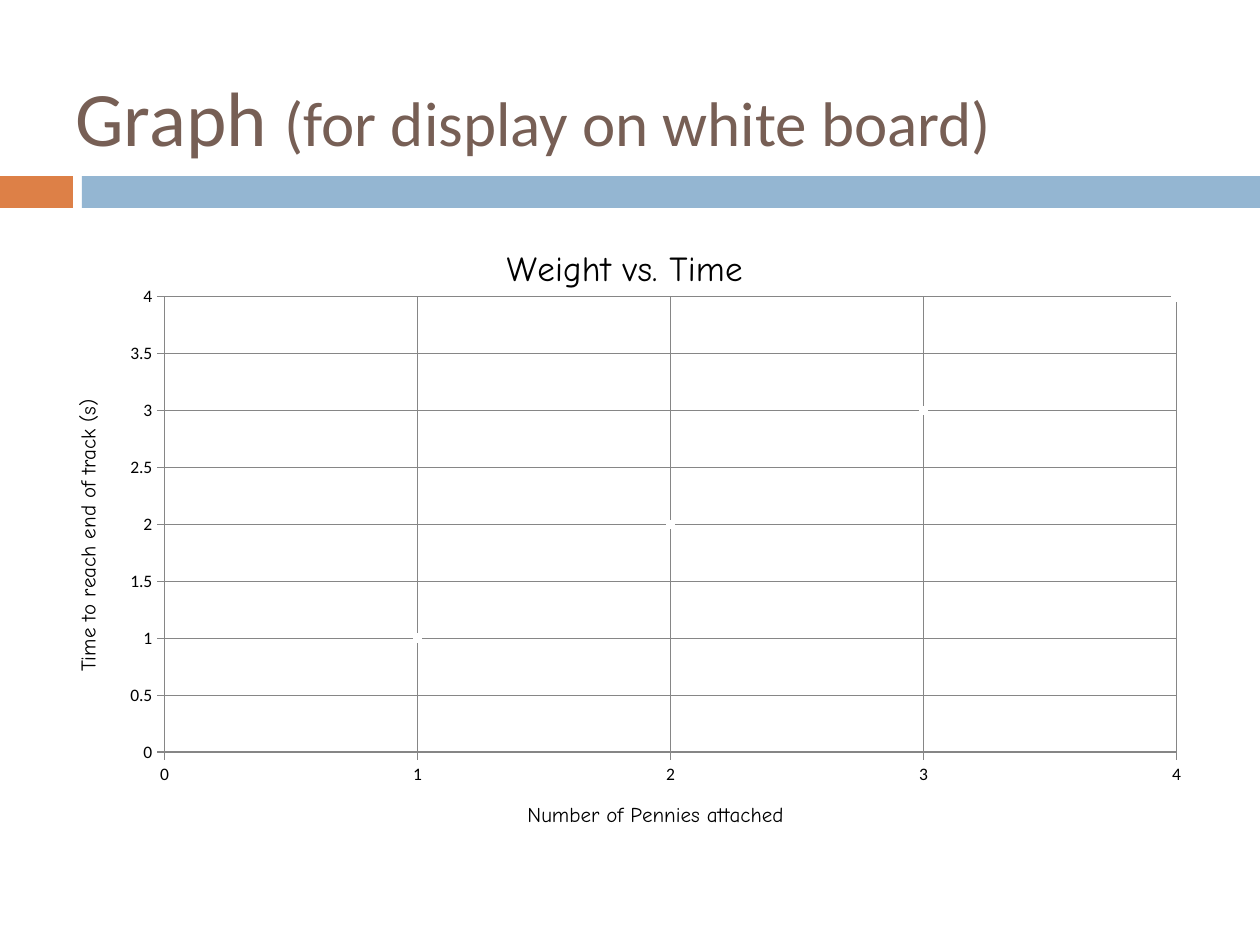
from lxml import etree
from pptx import Presentation
from pptx.chart.data import XyChartData
from pptx.dml.color import RGBColor
from pptx.enum.chart import XL_CHART_TYPE, XL_MARKER_STYLE, XL_TICK_MARK
from pptx.enum.shapes import MSO_SHAPE
from pptx.enum.text import MSO_ANCHOR
from pptx.oxml.ns import qn
from pptx.util import Emu, Pt

ORANGE = RGBColor(0xDD, 0x80, 0x47)
BLUE = RGBColor(0x94, 0xB6, 0xD2)
BROWN = RGBColor(0x77, 0x5F, 0x55)
BLACK = RGBColor(0, 0, 0)
GREY = RGBColor(0x86, 0x86, 0x86)
WHITE = RGBColor(0xFF, 0xFF, 0xFF)

TITLE = [("Graph ", 44), ("(for display on white board)", 36)]
BARS = [(0, 73, ORANGE), (82, 1178, BLUE)]
CHART_TITLE = "Weight vs. Time"
X_TITLE = "Number of Pennies attached"
Y_TITLE = "Time to reach end of track (s)"
POINTS = [(n, n) for n in range(1, 7)]
PLOT = {"x": 0.105, "y": 0.116, "w": 0.868, "h": 0.688}


def px(*values):
    return [Emu(round(v * 914400 / 126)) for v in values]


def style(font, name, size, color):
    font.name, font.size, font.bold = name, Pt(size), False
    font.color.rgb = color


def add_title(owner, text, size):
    tf = owner.text_frame
    r = tf.paragraphs[0].add_run()
    r.text = text
    style(r.font, "Comic Neue", size, BLACK)


def set_axis(axis, title, step):
    axis.has_title = True
    add_title(axis.axis_title, title, 12)
    axis.minimum_scale, axis.maximum_scale, axis.major_unit = 0, 4, step
    axis.major_tick_mark = XL_TICK_MARK.OUTSIDE
    axis.minor_tick_mark = XL_TICK_MARK.NONE
    axis.has_major_gridlines = True
    axis.tick_labels.number_format = "General"
    axis.tick_labels.number_format_is_linked = False
    for line in (axis.format.line, axis.major_gridlines.format.line):
        line.color.rgb = GREY
        line.width = Pt(0.75)


def set_plot_layout(chart):
    area = chart._chartSpace.find(".//" + qn("c:plotArea"))
    for old in area.findall(qn("c:layout")):
        area.remove(old)
    layout = etree.Element(qn("c:layout"))
    manual = etree.SubElement(layout, qn("c:manualLayout"))
    rules = [("layoutTarget", "inner"), ("xMode", "edge"), ("yMode", "edge")]
    for tag, value in rules + list(PLOT.items()):
        etree.SubElement(manual, qn("c:" + tag)).set("val", str(value))
    area.insert(0, layout)


def add_graph(s):
    data = XyChartData()
    series = data.add_series("Series 1")
    for x, y in POINTS:
        series.add_data_point(x, y)
    chart = s.shapes.add_chart(
        XL_CHART_TYPE.XY_SCATTER, *px(42, 220, 1166, 662), data).chart
    style(chart.font, "Calibri", 10, BLACK)
    chart.has_legend = False
    chart.has_title = True
    add_title(chart.chart_title, CHART_TITLE, 20)
    set_axis(chart.category_axis, X_TITLE, 1)
    set_axis(chart.value_axis, Y_TITLE, 0.5)
    set_plot_layout(chart)
    plot = chart.plots[0]
    plot.vary_by_categories = False
    ser = plot.series[0]
    ser.smooth = False
    ser.format.line.fill.background()
    ser.marker.style, ser.marker.size = XL_MARKER_STYLE.SQUARE, 5
    ser.marker.format.fill.solid()
    ser.marker.format.fill.fore_color.rgb = WHITE
    ser.marker.format.line.fill.background()


def main():
    """Build the slide with the weight and time graph."""
    prs = Presentation()
    prs.slide_width, prs.slide_height = px(1260, 945)
    s = prs.slides.add_slide(prs.slide_layouts[6])
    for left, width, color in BARS:
        sp = s.shapes.add_shape(MSO_SHAPE.RECTANGLE, *px(left, 176, width, 32))
        sp.shadow.inherit = False
        sp.fill.solid()
        sp.fill.fore_color.rgb = color
        sp.line.fill.background()
    add_graph(s)
    tf = s.shapes.add_textbox(*px(63, 63, 1040, 106)).text_frame
    tf.word_wrap = True
    tf.vertical_anchor = MSO_ANCHOR.MIDDLE
    for text, size in TITLE:
        r = tf.paragraphs[0].add_run()
        r.text = text
        style(r.font, "Calibri", size, BROWN)
    prs.save("out.pptx")


if __name__ == "__main__":
    main()
